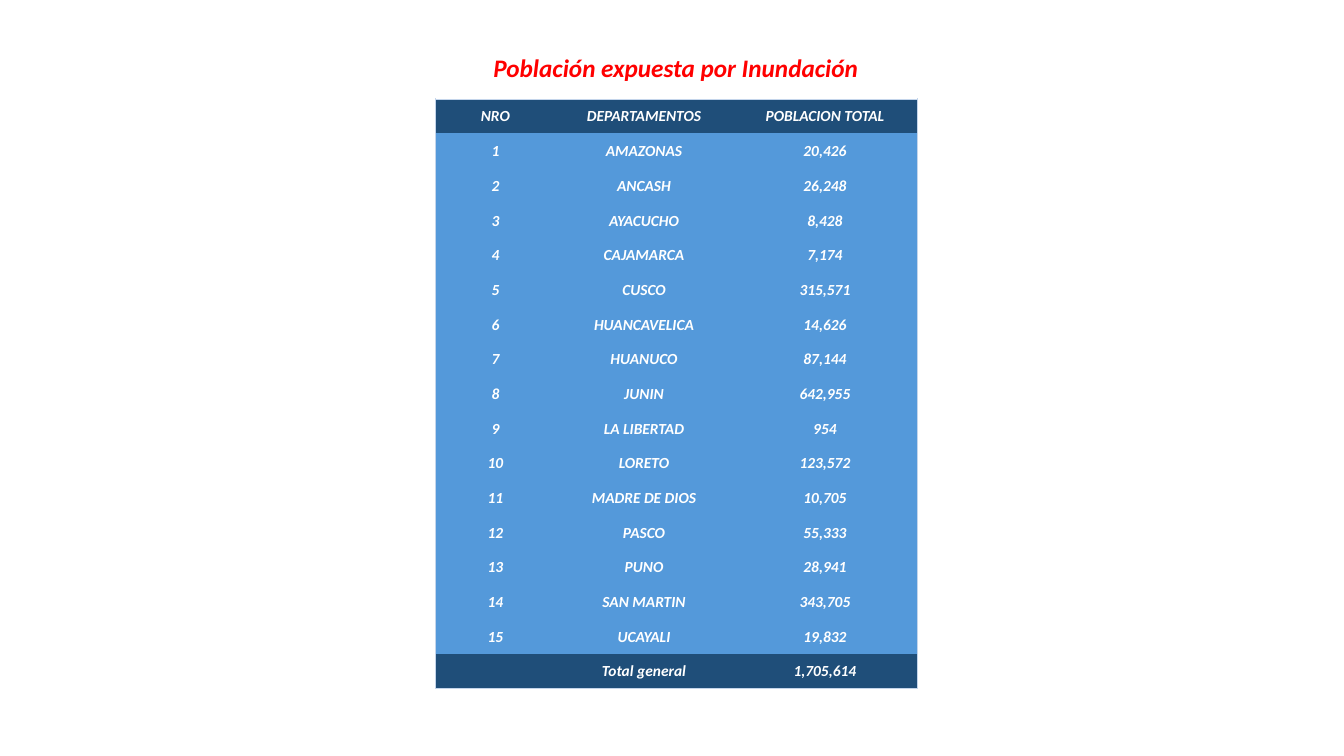
"""Build a slide with a table of the population exposed to flooding by department."""

from dataclasses import dataclass

from lxml.etree import SubElement
from pptx import Presentation
from pptx.dml.color import RGBColor as Color
from pptx.enum.text import MSO_ANCHOR as Anchor
from pptx.enum.text import MSO_AUTO_SIZE as AutoSize
from pptx.enum.text import PP_ALIGN as Align
from pptx.oxml.ns import qn
from pptx.slide import Slide
from pptx.table import _Cell as Cell
from pptx.text.text import _Paragraph as Paragraph
from pptx.util import Inches, Pt


@dataclass(frozen=True)
class Theme:
    font: str = "Calibri"
    title_size: float = 18
    cell_size: float = 11
    title: str = "FF0000"
    text: str = "FFFFFF"
    band: str = "1F4E79"
    body: str = "5499DA"
    border: str = "C4D5EB"
    border_width: float = 0.5


@dataclass(frozen=True)
class Department:
    name: str
    population: int


@dataclass(frozen=True)
class Area:
    left: float
    top: float
    width: float
    height: float

    def frame(self) -> tuple[int, int, int, int]:
        """Turn percentages of the slide into lengths."""
        return across(self.left), down(self.top), across(self.width), down(self.height)


THEME = Theme()
SLIDE_WIDTH, SLIDE_HEIGHT = Inches(13.33), Inches(7.5)
TITLE_AREA = Area(35.85, 6.27, 28.88, 5.33)
TABLE_AREA = Area(32.4, 13.07, 35.85, 78)
COLUMN_SHARES = (8.92, 13.2, 13.73)
TITLE = "Población expuesta por Inundación"
HEADINGS = ("NRO", "DEPARTAMENTOS", "POBLACION TOTAL")
DEPARTMENTS = (
    Department("AMAZONAS", 20426),
    Department("ANCASH", 26248),
    Department("AYACUCHO", 8428),
    Department("CAJAMARCA", 7174),
    Department("CUSCO", 315571),
    Department("HUANCAVELICA", 14626),
    Department("HUANUCO", 87144),
    Department("JUNIN", 642955),
    Department("LA LIBERTAD", 954),
    Department("LORETO", 123572),
    Department("MADRE DE DIOS", 10705),
    Department("PASCO", 55333),
    Department("PUNO", 28941),
    Department("SAN MARTIN", 343705),
    Department("UCAYALI", 19832),
)


def across(share: float) -> int:
    """Return a percentage of the slide's width."""
    return round(SLIDE_WIDTH * share / 100)


def down(share: float) -> int:
    """Return a percentage of the slide's height."""
    return round(SLIDE_HEIGHT * share / 100)


def write(para: Paragraph, text: str, size: float, color: str) -> None:
    """Write centred bold italic text."""
    para.text = text
    para.alignment = Align.CENTER
    para.font.name = THEME.font
    para.font.size = Pt(size)
    para.font.bold = para.font.italic = True
    para.font.color.rgb = Color.from_string(color)


def draw_title(page: Slide) -> None:
    """Draw the title above the table."""
    box = page.shapes.add_textbox(*TITLE_AREA.frame())
    box.text_frame.word_wrap = False
    box.text_frame.auto_size = AutoSize.SHAPE_TO_FIT_TEXT
    write(box.text_frame.paragraphs[0], TITLE, THEME.title_size, THEME.title)


def draw_borders(cell: Cell, outer_edges: dict[str, bool]) -> None:
    """Line the outer edges of a cell and clear its inner ones."""
    properties = cell._tc.get_or_add_tcPr()
    for position, (edge, is_outer) in enumerate(outer_edges.items()):
        line = SubElement(properties, qn(f"a:{edge}"), w=str(Pt(THEME.border_width)))
        if is_outer:
            fill = SubElement(line, qn("a:solidFill"))
            SubElement(fill, qn("a:srgbClr"), val=THEME.border)
        else:
            SubElement(line, qn("a:noFill"))
        properties.insert(position, line)


def draw_cell(cell: Cell, text: str, fill: str) -> None:
    """Fill a cell and write its text."""
    cell.fill.solid()
    cell.fill.fore_color.rgb = Color.from_string(fill)
    cell.vertical_anchor = Anchor.MIDDLE
    cell.margin_left = cell.margin_right = cell.margin_top = Inches(0.01)
    cell.margin_bottom = 0
    write(cell.text_frame.paragraphs[0], text, THEME.cell_size, THEME.text)


def table_rows() -> list[tuple[str, ...]]:
    """Return the headings, the numbered departments and their total."""
    body = [
        (str(number), department.name, f"{department.population:,}")
        for number, department in enumerate(DEPARTMENTS, start=1)
    ]
    total = sum(department.population for department in DEPARTMENTS)
    return [HEADINGS, *body, ("", "Total general", f"{total:,}")]


def draw_table(page: Slide) -> None:
    """Draw the table of departments."""
    rows = table_rows()
    last_row, last_column = len(rows) - 1, len(HEADINGS) - 1
    table = page.shapes.add_table(len(rows), len(HEADINGS), *TABLE_AREA.frame()).table
    table.first_row = table.horz_banding = False
    for column, share in zip(table.columns, COLUMN_SHARES):
        column.width = across(share)
    for row, texts in enumerate(rows):
        fill = THEME.band if row in (0, last_row) else THEME.body
        for column, text in enumerate(texts):
            cell = table.cell(row, column)
            draw_cell(cell, text, fill)
            draw_borders(cell, {
                "lnL": column == 0,
                "lnR": column == last_column,
                "lnT": row == 0,
                "lnB": row == last_row,
            })


def main() -> None:
    """Build and save the deck."""
    deck = Presentation()
    deck.slide_width, deck.slide_height = SLIDE_WIDTH, SLIDE_HEIGHT
    page = deck.slides.add_slide(deck.slide_layouts[6])
    draw_title(page)
    draw_table(page)
    deck.save("out.pptx")


if __name__ == "__main__":
    main()
